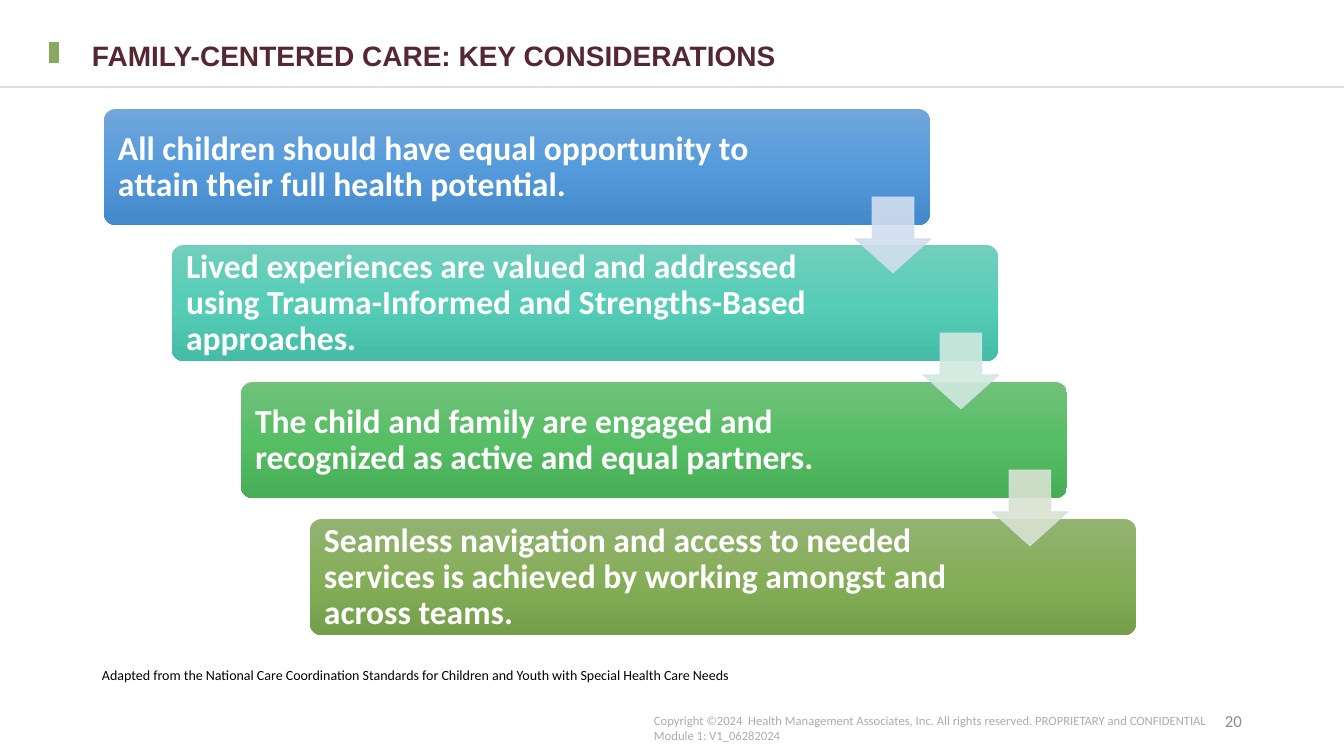
import pptx
import pptx.dml.color
import pptx.enum.shapes
import pptx.enum.text
import pptx.oxml.ns
import pptx.oxml.xmlchemy
import pptx.util
import copy
import lxml.etree

ANCHOR = pptx.enum.text.MSO_ANCHOR
ALIGN = pptx.enum.text.PP_ALIGN
SHAPE = pptx.enum.shapes.MSO_SHAPE
EMU_PER_PX = 914400 / 100.8

CARDS = [
    ("All children should have equal opportunity to attain their full health potential.",
     690, ("71A6DB", "559BDB", "448ACA"), "D2DEEF"),
    ("Lived experiences are valued and addressed using Trauma-Informed and Strengths-Based approaches.",
     675, ("71CFBC", "55CDB7", "45BDA6"), "D1E9DF"),
    ("The child and family are engaged and recognized as active and equal partners.",
     675, ("71C17B", "56BE65", "47AE56"), "D9E2D2"),
    ("Seamless navigation and access to needed services is achieved by working amongst and across teams.",
     675, ("93B372", "85AE59", "769F4B"), None),
]


def px(*lengths):
    return [pptx.util.Emu(round(length * EMU_PER_PX)) for length in lengths]


def color(value):
    return pptx.dml.color.RGBColor.from_string(value)


def set_alpha(shape, percent):
    for element in shape._element.spPr.iter(pptx.oxml.ns.qn("a:srgbClr")):
        alpha = lxml.etree.SubElement(element, pptx.oxml.ns.qn("a:alpha"))
        alpha.set("val", str(percent * 1000))


def write(shape, text, size=24, font="Calibri", ink="FFFFFF", bold=False, align=ALIGN.LEFT,
          anchor=ANCHOR.TOP, spacing=1.0, margins=(10, 5, 10, 5), grow=False):
    frame = shape.text_frame
    frame.text = text
    frame.word_wrap = True
    sizing = pptx.enum.text.MSO_AUTO_SIZE
    frame.auto_size = sizing.SHAPE_TO_FIT_TEXT if grow else sizing.NONE
    frame.vertical_anchor = anchor
    (frame.margin_left, frame.margin_top,
     frame.margin_right, frame.margin_bottom) = px(*margins)
    for paragraph in frame.paragraphs:
        paragraph.alignment = align
        paragraph.line_spacing = spacing
        paragraph.font.size = pptx.util.Pt(size)
        paragraph.font.name = font
        paragraph.font.bold = bold
        paragraph.font.color.rgb = color(ink)


class SlideBuilder:
    def __init__(self, presentation):
        self.slide = presentation.slides.add_slide(presentation.slide_layouts[5])
        self.shapes = self.slide.shapes

    def title(self, text, left, top, width, height):
        title = self.shapes.title
        title.left, title.top, title.width, title.height = px(left, top, width, height)
        write(title, text, size=20, font="Arial", ink="552733", bold=True,
              spacing=0.9, margins=(0, 0, 0, 0), grow=True)

    def text(self, text, left, top, width, height, **style):
        box = self.shapes.add_textbox(*px(left, top, width, height))
        write(box, text, **style)

    def line(self, start_x, start_y, end_x, end_y, ink, weight, opacity=100):
        line = self.shapes.add_connector(pptx.enum.shapes.MSO_CONNECTOR.STRAIGHT,
                                         *px(start_x, start_y, end_x, end_y))
        line.line.color.rgb = color(ink)
        line.line.width = pptx.util.Pt(weight)
        set_alpha(line, opacity)
        lxml.etree.SubElement(line._element.spPr, pptx.oxml.ns.qn("a:effectLst"))

    def card(self, left, top, width, height, gradient):
        card = self.shapes.add_shape(SHAPE.ROUNDED_RECTANGLE, *px(left, top, width, height))
        card.adjustments[0] = 0.1
        card.shadow.inherit = False
        card.line.fill.background()
        card.fill.gradient()
        card.fill.gradient_angle = 270
        stop_list = next(card._element.spPr.iter(pptx.oxml.ns.qn("a:gsLst")))
        stop_list.append(copy.deepcopy(stop_list[0]))
        for stop, position, ink in zip(card.fill.gradient_stops, (0, 0.5, 1), gradient):
            stop.position = position
            stop.color.rgb = color(ink)

    def arrow(self, left, top, size, fill):
        arrow = self.shapes.add_shape(SHAPE.DOWN_ARROW, *px(left, top, size, size))
        arrow.adjustments[0] = 0.55
        arrow.adjustments[1] = 0.45
        arrow.shadow.inherit = False
        arrow.fill.solid()
        arrow.fill.fore_color.rgb = color(fill)
        arrow.line.color.rgb = color("D2DEEF")
        arrow.line.width = pptx.util.Pt(0.5)
        set_alpha(arrow, 90)


def main():
    presentation = pptx.Presentation()
    presentation.slide_width, presentation.slide_height = px(1344, 756)
    builder = SlideBuilder(presentation)

    builder.text("Copyright ©2024  Health Management Associates, Inc. All rights reserved. "
                 "PROPRIETARY and CONFIDENTIAL\nModule 1: V1_06282024",
                 644, 708, 579, 40, size=9, ink="AFABAB", grow=True)
    builder.line(0, 87, 1344, 87, "000000", 1.75, opacity=12)
    builder.line(54, 42, 54, 63, "86AB5D", 7)
    builder.title("FAMILY-CENTERED CARE: KEY CONSIDERATIONS", 92, 42, 1159, 30)
    builder.text("Adapted from the National Care Coordination Standards for Children and Youth "
                 "with Special Health Care Needs",
                 92, 649, 1159, 40, size=10, ink="000000", anchor=ANCHOR.BOTTOM, spacing=0.9)

    corners = [(104 + 206 * step // 3, 109 + 410 * step // 3) for step in range(len(CARDS))]
    for (left, top), (text, text_width, gradient, arrow_fill) in zip(corners, CARDS):
        builder.card(left, top, 826, 116, gradient)
        builder.text(text, left + 4, top + 4, text_width, 109, bold=True,
                     anchor=ANCHOR.MIDDLE, spacing=0.9, margins=(10, 10, 10, 10))
    for (left, top), (text, text_width, gradient, arrow_fill) in zip(corners, CARDS):
        if arrow_fill:
            builder.arrow(left + 751, top + 88, 76, arrow_fill)

    builder.text("20", 950, 701, 302, 40, size=12, ink="8C8C8C",
                 align=ALIGN.RIGHT, anchor=ANCHOR.MIDDLE)
    presentation.save("out.pptx")


if __name__ == "__main__":
    main()
